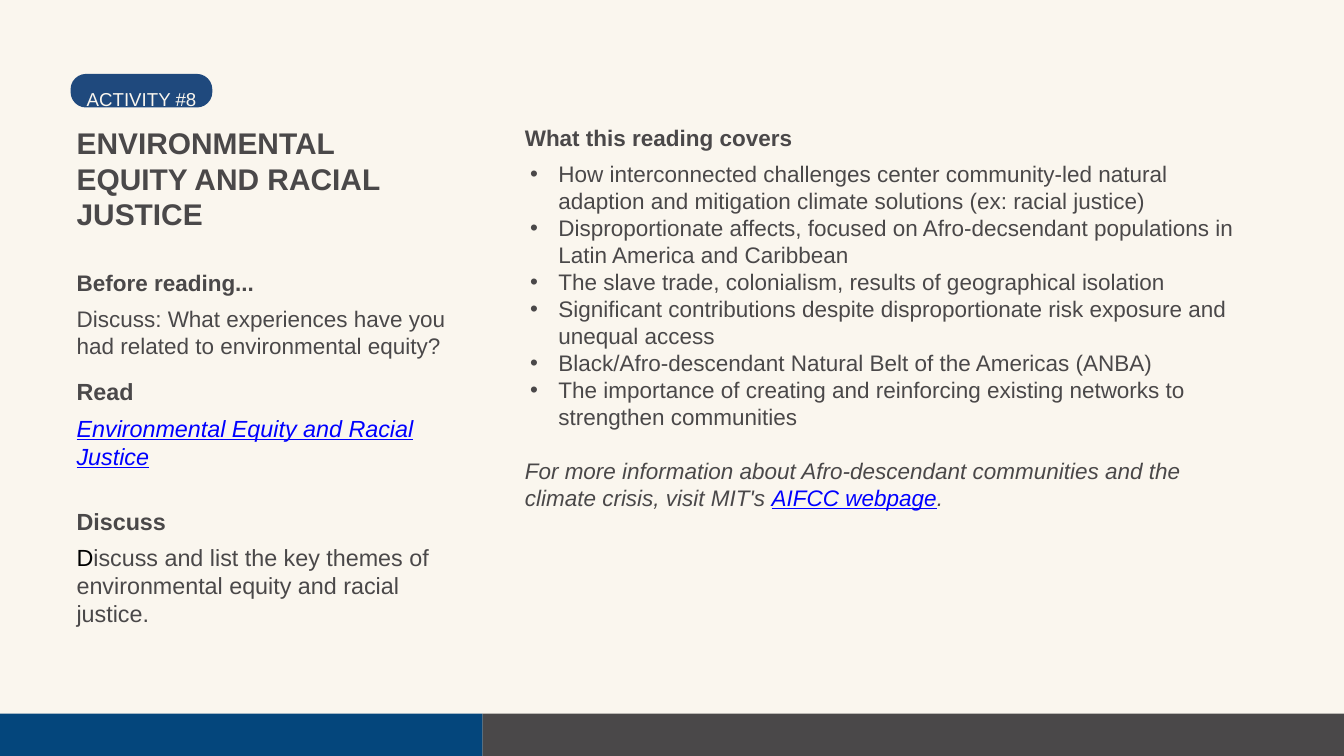
from lxml import etree
from pptx import Presentation
from pptx.dml.color import RGBColor
from pptx.enum import shapes, text
from pptx.oxml.ns import qn
from pptx.util import Inches, Pt

COLORS = {
    "cream": "FAF6EE",
    "charcoal": "4A4849",
    "ocean": "04467C",
    "navy": "1F497D",
    "link": "0000FF",
    "black": "000000",
}
FRAME = {
    "margin_left": 0, "margin_top": 0, "margin_right": 0, "margin_bottom": 0,
    "word_wrap": True,
    "auto_size": text.MSO_AUTO_SIZE.NONE,
    "vertical_anchor": text.MSO_ANCHOR.TOP,
}
LEADING = 1.2
BOLD = {"bold": True}
ITALIC = {"italic": True}
LINK = {"italic": True, "underline": True, "color": "link"}


class SlideBuilder:
    """Holds the style and the slide being built."""

    def __init__(self, slide):
        self.slide = slide
        slide.background.fill.solid()
        slide.background.fill.fore_color.rgb = self.color("cream")

    def color(self, name):
        return RGBColor.from_string(COLORS[name])

    def block(self, kind, box, color, rounding=None):
        shape = self.slide.shapes.add_shape(kind, *map(Inches, box))
        shape.shadow.inherit = False
        shape.fill.solid()
        shape.fill.fore_color.rgb = self.color(color)
        shape.line.fill.background()
        if rounding is not None:
            shape.adjustments[0] = rounding

    def frame(self, shape, box):
        shape.left, shape.top, shape.width, shape.height = map(Inches, box)
        for name, value in FRAME.items():
            setattr(shape.text_frame, name, value)
        return shape.text_frame

    def add_runs(self, paragraph, runs, size, spacing=None, before=0):
        paragraph.alignment = text.PP_ALIGN.LEFT
        paragraph.space_before = Pt(before)
        paragraph.line_spacing = spacing or Pt(round(LEADING * size, 1))
        for wording, style in runs:
            run = paragraph.add_run()
            run.text = wording
            values = {"name": "Arial", "size": Pt(size), "bold": False, **style}
            run.font.color.rgb = self.color(values.pop("color", "charcoal"))
            for name, value in values.items():
                setattr(run.font, name, value)

    def text(self, box, runs, size, spacing=None):
        shape = self.slide.shapes.add_textbox(*map(Inches, box))
        self.add_runs(self.frame(shape, box).paragraphs[0], runs, size, spacing)

    def title(self, box, wording, size):
        frame = self.frame(self.slide.shapes.title, box)
        self.add_runs(frame.paragraphs[0], [(wording, BOLD)], size)

    def bullet(self, paragraph, mark=None):
        properties = paragraph._p.get_or_add_pPr()
        properties.set("marL", str(Inches(0.5) if mark else 0))
        properties.set("indent", str(Inches(-0.42) if mark else 0))
        if mark:
            color = etree.SubElement(properties, qn("a:buClr"))
            etree.SubElement(color, qn("a:srgbClr"), val=COLORS["charcoal"])
            etree.SubElement(properties, qn("a:buChar"), char=mark)
        else:
            etree.SubElement(properties, qn("a:buNone"))

    def body(self, box, items, closing, size):
        frame = self.frame(self.slide.placeholders[1], box)
        for index, item in enumerate(items):
            paragraph = frame.add_paragraph() if index else frame.paragraphs[0]
            self.bullet(paragraph, "•")
            self.add_runs(paragraph, [(item, {})], size)
        paragraph = frame.add_paragraph()
        self.bullet(paragraph)
        self.add_runs(paragraph, closing, size, before=LEADING * size)


def main():
    presentation = Presentation()
    presentation.slide_width, presentation.slide_height = Inches(20), Inches(11.25)
    builder = SlideBuilder(presentation.slides.add_slide(presentation.slide_layouts[1]))

    # Footer bars
    split, footer_top, footer_height = 7.18, 10.62, 0.63
    rectangle = shapes.MSO_SHAPE.RECTANGLE
    builder.block(rectangle, (split, footer_top, 20 - split, footer_height), "charcoal")
    builder.block(rectangle, (0, footer_top, split, footer_height), "ocean")

    # Activity badge and title
    builder.block(shapes.MSO_SHAPE.ROUNDED_RECTANGLE, (1.05, 1.1, 2.11, 0.5), "navy", 0.46)
    builder.text((1.29, 1.18, 9.33, 0.34), [("ACTIVITY #8", {"color": "cream"})], 20, 1.4)
    builder.title((1.14, 1.85, 4.65, 1.62), "ENVIRONMENTAL EQUITY AND RACIAL JUSTICE", 32)

    # Left column: heading, top of heading, text, lines of text, size
    sections = [
        ("Before reading...", 4.01,
         [("Discuss: What experiences have you had related to environmental equity?", {})],
         2, 24.1),
        ("Read", 5.61, [("Environmental Equity and Racial Justice", LINK)], 2, 25),
        ("Discuss", 7.54,
         [("D", {"color": "black"}),
          ("iscuss and list the key themes of environmental equity and racial justice.", {})],
         3, 25),
    ]
    for heading, top, runs, lines, size in sections:
        line = LEADING * size / 72
        builder.text((1.14, top, 5.66, line), [(heading, BOLD)], size)
        builder.text((1.14, top + line + 0.13, 5.66, lines * line), runs, size)

    # Right column
    builder.text((7.81, 1.85, 10.76, 0.41), [("What this reading covers", BOLD)], 24.1)
    builder.body(
        (7.81, 2.38, 10.76, 5.28),
        [
            "How interconnected challenges center community-led natural adaption "
            "and mitigation climate solutions (ex: racial justice)",
            "Disproportionate affects, focused on Afro-decsendant populations in "
            "Latin America and Caribbean",
            "The slave trade, colonialism, results of geographical isolation",
            "Significant contributions despite disproportionate risk exposure and unequal access",
            "Black/Afro-descendant Natural Belt of the Americas (ANBA)",
            "The importance of creating and reinforcing existing networks to "
            "strengthen communities",
        ],
        [
            ("For more information about Afro-descendant communities and the "
             "climate crisis, visit MIT's ", ITALIC),
            ("AIFCC webpage", LINK),
            (".", ITALIC),
        ],
        24.1,
    )

    presentation.save("out.pptx")


if __name__ == "__main__":
    main()
